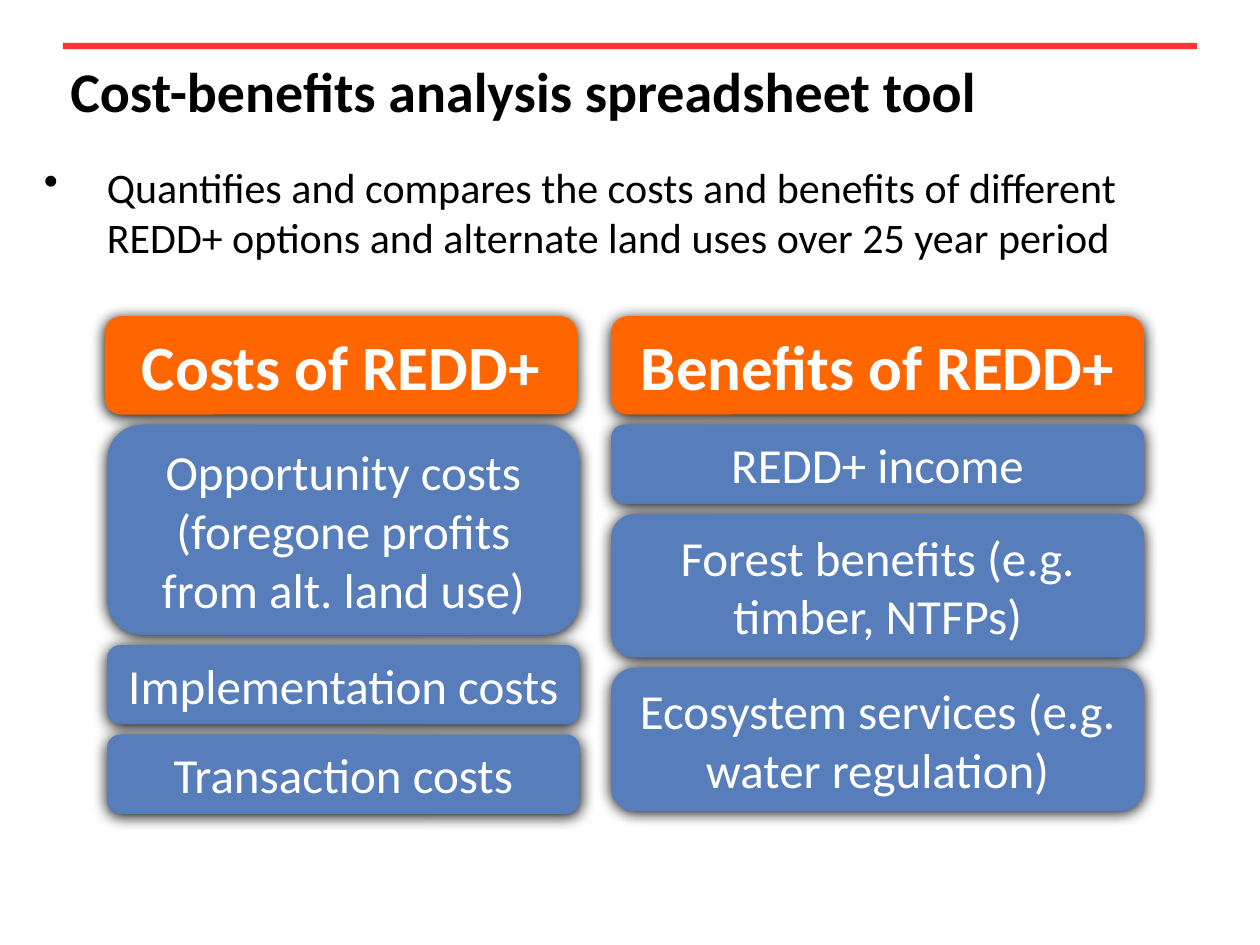
import pptx
import pptx.dml.color
import pptx.enum.shapes
import pptx.enum.text
import pptx.oxml
import pptx.oxml.ns
import pptx.util
from lxml import etree

RGBColor = pptx.dml.color.RGBColor
Inches = pptx.util.Inches
Align = pptx.enum.text.PP_ALIGN
Anchor = pptx.enum.text.MSO_ANCHOR
Preset = pptx.enum.shapes.MSO_SHAPE

BLACK = RGBColor(0x00, 0x00, 0x00)
WHITE = RGBColor(0xFF, 0xFF, 0xFF)
RED = RGBColor(0xFF, 0x33, 0x33)
ORANGE = RGBColor(0xFF, 0x66, 0x00)
BLUE = RGBColor(0x57, 0x7E, 0xBB)

FONT = "Calibri"
GAP = 0.08
HEADER_HEIGHT = 0.78

COSTS = [
    ("Opportunity costs (foregone profits from alt. land use)", 1.67),
    ("Implementation costs", 0.63),
    ("Transaction costs", 0.63),
]
BENEFITS = [
    ("REDD+ income", 0.63),
    ("Forest benefits (e.g. timber, NTFPs)", 1.14),
    ("Ecosystem services (e.g. water regulation)", 1.14),
]


def write_text(shape, text, size, color=BLACK, bold=False, align=Align.LEFT,
               anchor=Anchor.MIDDLE, bullet_indent=None):
    frame = shape.text_frame
    frame.word_wrap = True
    frame.vertical_anchor = anchor
    para = frame.paragraphs[0]
    para.alignment = align
    if bullet_indent:
        properties = para._p.get_or_add_pPr()
        properties.set("marL", str(Inches(bullet_indent)))
        properties.set("indent", str(-Inches(bullet_indent)))
        bullet = etree.SubElement(properties, pptx.oxml.ns.qn("a:buChar"))
        bullet.set("char", "•")
    span = para.add_run()
    span.text = text
    span.font.name = FONT
    span.font.size = pptx.util.Pt(size)
    span.font.bold = bold
    span.font.color.rgb = color


def add_text_box(page, box, text, size, **text_format):
    shape = page.shapes.add_textbox(*map(Inches, box))
    write_text(shape, text, size, **text_format)


def add_filled(page, preset, box, fill):
    shape = page.shapes.add_shape(preset, *map(Inches, box))
    shape.shadow.inherit = False
    shape.fill.solid()
    shape.fill.fore_color.rgb = fill
    shape.line.fill.background()
    return shape


def add_soft_shadow(shape):
    effects = shape._element.spPr.find(pptx.oxml.ns.qn("a:effectLst"))
    effects.append(pptx.oxml.parse_xml(
        f'<a:outerShdw {pptx.oxml.ns.nsdecls("a")} blurRad="{pptx.util.Pt(8.5)}"'
        f' dist="{pptx.util.Pt(1)}" dir="5400000" rotWithShape="0">'
        '<a:srgbClr val="000000"/></a:outerShdw>'))


def add_card(page, box, text, size, fill, bold=False):
    card = add_filled(page, Preset.ROUNDED_RECTANGLE, box, fill)
    add_soft_shadow(card)
    write_text(card, text, size, color=WHITE, bold=bold, align=Align.CENTER)


def add_heading(page, box):
    """Red rule with the title beneath it."""
    left, top, width, height = box
    add_filled(page, Preset.RECTANGLE, (left, top, width, 0.05), RED)
    add_text_box(page, (left - 0.04, top, width, height),
                 "Cost-benefits analysis spreadsheet tool", 32, bold=True)


def add_column(page, box, title, items, shift=0):
    """Orange header over a stack of blue cards, which may be shifted sideways."""
    left, top, width = box
    add_card(page, (left, top, width, HEADER_HEIGHT), title, 36, ORANGE, bold=True)
    top += HEADER_HEIGHT + GAP
    for text, height in items:
        add_card(page, (left + shift, top, width, height), text, 28, BLUE)
        top += height + GAP


def main():
    deck = pptx.Presentation()
    deck.slide_width, deck.slide_height = Inches(10), Inches(7.5)
    page = deck.slides.add_slide(deck.slide_layouts[6])

    add_heading(page, (0.5, 0.34, 9, 0.75))

    # Summary bullet
    add_text_box(page, (0.25, 1.23, 9.21, 0.91),
                 "Quantifies and compares the costs and benefits of different "
                 "REDD+ options and alternate land uses over 25 year period",
                 24, anchor=Anchor.TOP, bullet_indent=0.5)

    # Costs against benefits
    add_column(page, (0.83, 2.51, 3.75), "Costs of REDD+", COSTS, shift=0.02)
    add_column(page, (4.85, 2.51, 4.23), "Benefits of REDD+", BENEFITS)

    deck.save("out.pptx")


if __name__ == "__main__":
    main()
